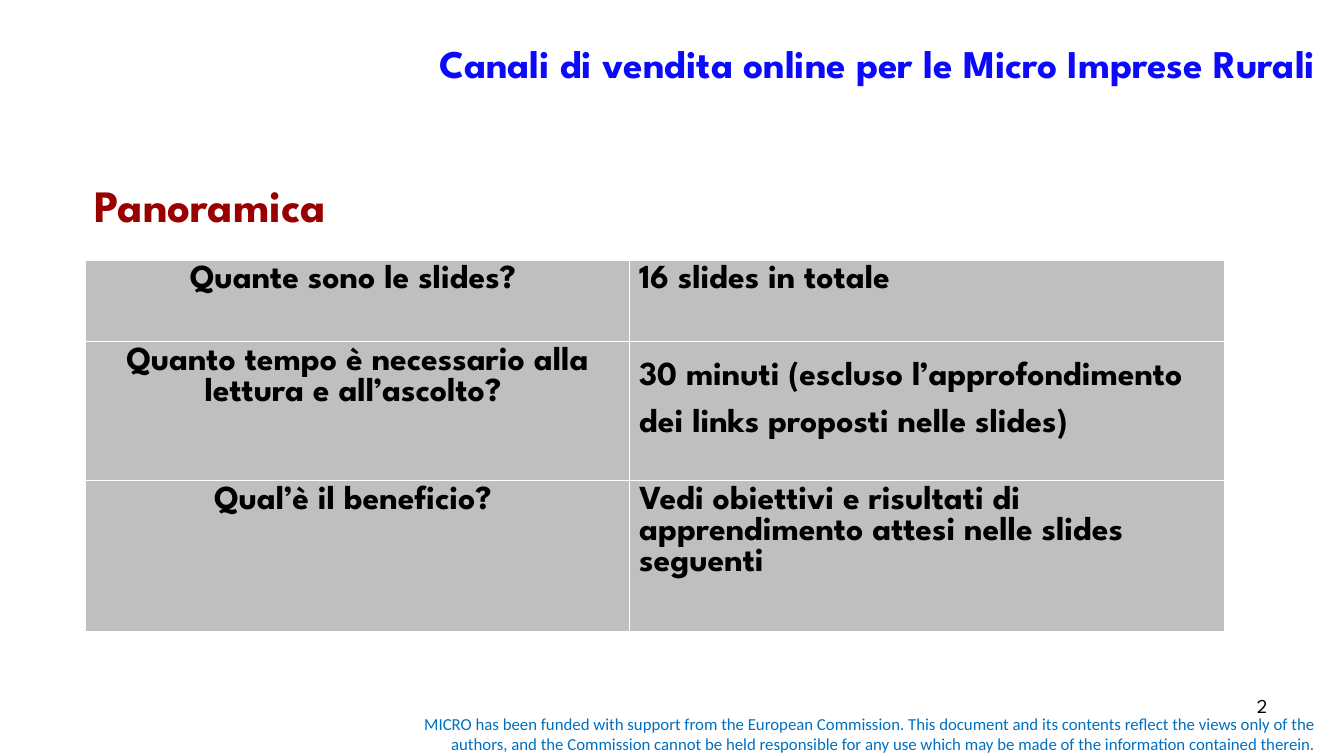
from lxml import etree
from pptx import Presentation
from pptx.dml.color import RGBColor
from pptx.enum.text import MSO_ANCHOR as Anchor, PP_ALIGN as Align
from pptx.oxml.ns import qn
from pptx.util import Inches, Pt

BLACK = RGBColor(0x00, 0x00, 0x00)
BLUE = RGBColor(0x0B, 0x0A, 0xFD)
FOOTER_BLUE = RGBColor(0x00, 0x70, 0xC0)
DARK_RED = RGBColor(0x99, 0x00, 0x00)
GREY = RGBColor(0xBF, 0xBF, 0xBF)
WHITE = RGBColor(0xFF, 0xFF, 0xFF)

FOOTER = (
    "MICRO has been funded with support from the European Commission. "
    "This document and its contents reflect the views only of the authors, "
    "and the Commission cannot be held responsible for any use which may be "
    "made of the information contained therein."
)
COLUMN_WIDTHS = (5.39, 5.91)
OVERVIEW = (
    (0.81, 1, "Quante sono le slides? ", "16 slides in totale"),
    (1.38, 1.5, "Quanto tempo è necessario alla lettura e all’ascolto? ",
     "30 minuti (escluso l’approfondimento dei links proposti nelle slides)"),
    (1.5, 1, "Qual’è il beneficio? ",
     "Vedi obiettivi e risultati di apprendimento attesi nelle slides seguenti"),
)


class SlideBuilder:
    """Adds text and tables in the house style to one slide."""

    def __init__(self, slide, font="League Spartan"):
        self.slide = slide
        self.font = font

    def style(self, paragraph, size, color, bold=False, align=Align.LEFT, font=None):
        paragraph.alignment = align
        paragraph.font.name = font or self.font
        paragraph.font.size = Pt(size)
        paragraph.font.bold = bold
        paragraph.font.color.rgb = color

    def text(self, left, top, width, height, text, size, color,
             anchor=Anchor.TOP, **style):
        shape = self.slide.shapes.add_textbox(
            Inches(left), Inches(top), Inches(width), Inches(height))
        frame = shape.text_frame
        frame.word_wrap = True
        frame.vertical_anchor = anchor
        frame.text = text
        self.style(frame.paragraphs[0], size, color, **style)

    def borders(self, cell, color, width):
        properties = cell._tc.get_or_add_tcPr()
        for side in ("lnL", "lnR", "lnT", "lnB"):
            line = etree.SubElement(properties, qn(f"a:{side}"), w=str(Pt(width)))
            fill = etree.SubElement(line, qn("a:solidFill"))
            etree.SubElement(fill, qn("a:srgbClr"), val=str(color))

    def table(self, left, top, widths, rows):
        height = sum(row[0] for row in rows)
        table = self.slide.shapes.add_table(
            len(rows), len(widths), Inches(left), Inches(top),
            Inches(sum(widths)), Inches(height)).table
        table.first_row = False
        table.horz_banding = False
        for column, width in zip(table.columns, widths):
            column.width = Inches(width)
        for index, (row_height, spacing, question, answer) in enumerate(rows):
            table.rows[index].height = Inches(row_height)
            self.cell(table.cell(index, 0), question, Align.CENTER)
            self.cell(table.cell(index, 1), answer, Align.LEFT, spacing)

    def cell(self, cell, text, align, spacing=1):
        cell.text = text
        paragraph = cell.text_frame.paragraphs[0]
        self.style(paragraph, 24, BLACK, bold=True, align=align)
        paragraph.line_spacing = float(spacing)
        self.borders(cell, WHITE, 1)
        cell.fill.solid()
        cell.fill.fore_color.rgb = GREY


def main():
    presentation = Presentation()
    presentation.slide_width = Inches(13.33)
    presentation.slide_height = Inches(7.5)
    builder = SlideBuilder(presentation.slides.add_slide(presentation.slide_layouts[6]))
    builder.text(3.75, 7.03, 9.4, 0.5, FOOTER, 12, FOOTER_BLUE,
                 anchor=Anchor.MIDDLE, align=Align.RIGHT, font="Calibri")
    builder.text(1.14, 0, 12, 1.25,
                 "Canali di vendita online per le Micro Imprese Rurali", 28, BLUE,
                 anchor=Anchor.MIDDLE, bold=True, align=Align.RIGHT)
    builder.table(0.85, 2.58, COLUMN_WIDTHS, OVERVIEW)
    builder.text(9.56, 6.83, 3.11, 0.52, "2", 14, BLACK, align=Align.RIGHT)
    builder.text(0.84, 1.71, 2.9, 0.64, "Panoramica", 32, DARK_RED, bold=True)
    presentation.save("out.pptx")


if __name__ == "__main__":
    main()
